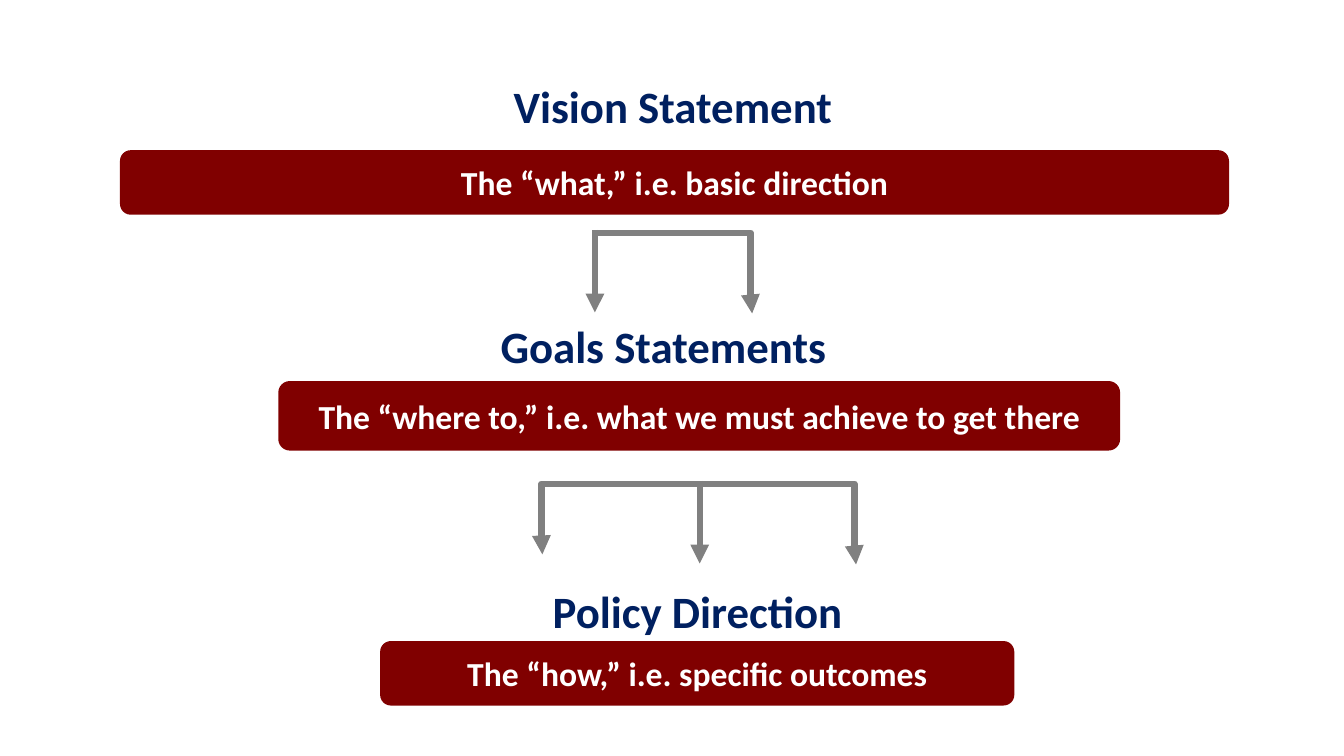
import pptx
import pptx.util
import pptx.dml.color
import pptx.enum.shapes
import pptx.enum.text
import pptx.oxml
import pptx.oxml.ns

PX = 9144  # EMU per px, 100 px to the inch


def colour(hex_string):
    return pptx.dml.color.RGBColor.from_string(hex_string)


class StatementSlide:
    FONT = "Calibri"
    NAVY, MAROON, GREY, WHITE = "002060", "800000", "808080", "FFFFFF"

    def __init__(self, presentation):
        self.slide = presentation.slides.add_slide(presentation.slide_layouts[6])

    def set_text(self, frame, text, size, hex_string):
        frame.word_wrap = True
        paragraph = frame.paragraphs[0]
        paragraph.text = text
        paragraph.alignment = pptx.enum.text.PP_ALIGN.CENTER
        paragraph.font.name = self.FONT
        paragraph.font.size = pptx.util.Pt(size)
        paragraph.font.bold = True
        paragraph.font.color.rgb = colour(hex_string)

    def heading(self, text, left, top, width):
        box = self.slide.shapes.add_textbox(left * PX, top * PX, width * PX, 64 * PX)
        self.set_text(box.text_frame, text, 32, self.NAVY)

    def bar(self, text, left, top, width, height):
        bar = self.slide.shapes.add_shape(
            pptx.enum.shapes.MSO_SHAPE.ROUNDED_RECTANGLE,
            left * PX, top * PX, width * PX, height * PX)
        bar.shadow.inherit = False
        bar.fill.solid()
        bar.fill.fore_color.rgb = colour(self.MAROON)
        bar.line.fill.background()
        bar.text_frame.vertical_anchor = pptx.enum.text.MSO_ANCHOR.MIDDLE
        self.set_text(bar.text_frame, text, 24, self.WHITE)

    def arrow(self, start, end, bend=None):
        """Straight arrow, or an elbow whose bend is a percentage of its width."""
        kinds = pptx.enum.shapes.MSO_CONNECTOR
        kind = kinds.STRAIGHT if bend is None else kinds.ELBOW
        arrow = self.slide.shapes.add_connector(
            kind, *(value * PX for value in start + end))
        arrow.line.color.rgb = colour(self.GREY)
        arrow.line.width = pptx.util.Pt(4.5)
        qn = pptx.oxml.ns.qn
        properties = arrow._element.spPr
        outline = properties.find(qn("a:ln"))
        outline.append(outline.makeelement(qn("a:tailEnd"), {"type": "triangle"}))
        properties.append(properties.makeelement(qn("a:effectLst"), {}))
        if bend is not None:
            guides = properties.find(qn("a:prstGeom")).find(qn("a:avLst"))
            guides.append(guides.makeelement(
                qn("a:gd"), {"name": "adj1", "fmla": f"val {round(bend * 1000)}"}))


def main():
    presentation = pptx.Presentation()
    presentation.slide_width = 1333 * PX
    presentation.slide_height = 750 * PX
    page = StatementSlide(presentation)

    # Headings
    for text, left, top, width in (
            ("Vision Statement", 414, 73, 507),
            ("Goals Statements", 467, 311, 382),
            ("Policy Direction", 501, 574, 382)):
        page.heading(text, left, top, width)

    # Arrows from vision to goals
    page.arrow((590, 228), (590, 310))
    page.arrow((591, 231), (746, 311), bend=99)

    # Arrows from goals to policy
    page.arrow((692, 480), (538, 550), bend=100.6)
    page.arrow((694, 480), (849, 560), bend=99)
    page.arrow((694, 477), (694, 559))

    # Bars
    for text, left, top, width, height in (
            ("The “what,” i.e. basic direction", 119, 149, 1100, 64),
            ("The “where to,” i.e. what we must achieve to get there", 276, 378, 835, 69),
            ("The “how,” i.e. specific outcomes", 377, 636, 629, 64)):
        page.bar(text, left, top, width, height)

    presentation.save("out.pptx")


if __name__ == "__main__":
    main()
